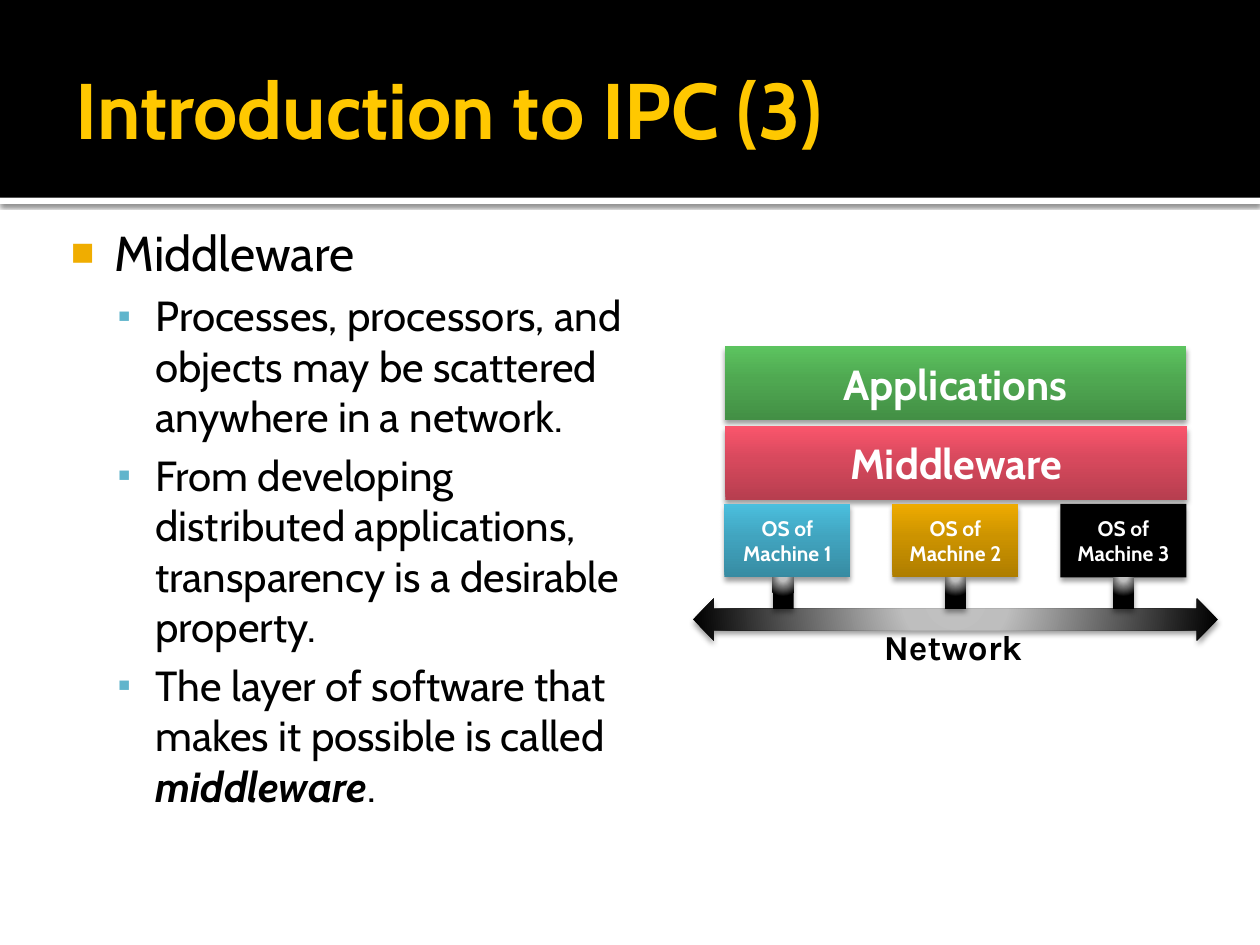
from dataclasses import dataclass

from pptx import Presentation, oxml
from pptx.dml.color import RGBColor
from pptx.enum import shapes, text
from pptx.oxml import ns
from pptx.util import Pt

BLACK = RGBColor(0x00, 0x00, 0x00)
WHITE = RGBColor(0xFF, 0xFF, 0xFF)
YELLOW = RGBColor(0xFF, 0xC8, 0x00)
AMBER = RGBColor(0xF0, 0xAD, 0x00)
SKY = RGBColor(0x60, 0xB5, 0xCC)
GREENS = (RGBColor(0x43, 0x8F, 0x45), RGBColor(0x4F, 0xA8, 0x51), RGBColor(0x5C, 0xC3, 0x5F))
REDS = (RGBColor(0xB7, 0x3E, 0x4F), RGBColor(0xD7, 0x49, 0x5D), RGBColor(0xFA, 0x55, 0x6C))
BLUES = (RGBColor(0x37, 0x8B, 0xA2), RGBColor(0x41, 0xA4, 0xBF), RGBColor(0x4B, 0xBF, 0xDE))
GOLDS = (RGBColor(0xAE, 0x7D, 0x00), RGBColor(0xCC, 0x93, 0x00), RGBColor(0xEE, 0xAB, 0x00))
SILVER = RGBColor(0xC0, 0xC0, 0xC0)
GREY = RGBColor(0xBE, 0xBE, 0xBE)
METAL = (SILVER, SILVER, GREY, BLACK)

LINEAR = '<a:lin ang="16200000" scaled="0"/>'
RADIAL = '<a:path path="circle"><a:fillToRect l="10000" t="-25000" r="10000" b="125000"/></a:path>'
RECTANGLE = shapes.MSO_SHAPE.RECTANGLE
ARROW = shapes.MSO_SHAPE.LEFT_RIGHT_ARROW


@dataclass
class Shadow:
    opacity: int
    blur: float
    distance: float


@dataclass
class Block:
    left: float
    top: float
    width: float
    height: float
    colors: tuple
    label: str = ""
    size: int = 24
    kind: shapes.MSO_SHAPE = RECTANGLE
    shadow: Shadow | None = None


@dataclass
class Bullet:
    symbol: str
    color: RGBColor
    scale: int
    margin: float
    indent: float
    size: int
    before: float


SOFT = Shadow(38, 3.1, 2)
TOPIC = Bullet("■", AMBER, 80, 34.5, -25.2, 28, 0)
DETAIL = Bullet("▪", SKY, 90, 57.6, -21.6, 24, 4.8)


def add_xml(parent, content: str) -> None:
    parent.append(oxml.parse_xml(content.replace(">", f" {ns.nsdecls('a')}>", 1)))


def set_font(paragraph, name: str, size: int, color: RGBColor, bold: bool) -> None:
    font = paragraph.font
    font.name, font.size, font.bold = name, Pt(size), bold
    font.color.rgb = color


def set_gradient(shape, colors: tuple) -> None:
    metal = colors == METAL
    places = (0, 12, 20, 100) if metal else (0, 55, 100)
    stops = "".join(
        f'<a:gs pos="{place * 1000}"><a:srgbClr val="{color}"/></a:gs>'
        for place, color in zip(places, colors)
    )
    direction = RADIAL if metal else LINEAR
    add_xml(
        shape._element.spPr,
        f'<a:gradFill rotWithShape="1"><a:gsLst>{stops}</a:gsLst>{direction}</a:gradFill>',
    )


def set_shadow(shape, shadow: Shadow) -> None:
    add_xml(
        shape._element.spPr.find(ns.qn("a:effectLst")),
        f'<a:outerShdw blurRad="{Pt(shadow.blur)}" dist="{Pt(shadow.distance)}" dir="5400000"'
        f' rotWithShape="0"><a:srgbClr val="{BLACK}">'
        f'<a:alpha val="{shadow.opacity * 1000}"/></a:srgbClr></a:outerShdw>',
    )


def add_block(container, block: Block):
    shape = container.add_shape(
        block.kind, Pt(block.left), Pt(block.top), Pt(block.width), Pt(block.height)
    )
    if len(block.colors) == 1:
        shape.fill.solid()
        shape.fill.fore_color.rgb = block.colors[0]
    else:
        set_gradient(shape, block.colors)
    shape.line.fill.background()
    shape.shadow.inherit = False
    if block.shadow:
        set_shadow(shape, block.shadow)
    if block.label:
        frame = shape.text_frame
        frame.text = block.label
        frame.vertical_anchor = text.MSO_ANCHOR.MIDDLE
        paragraph = frame.paragraphs[0]
        paragraph.alignment = text.PP_ALIGN.CENTER
        set_font(paragraph, "Cabin", block.size, WHITE, True)
    return shape


def place(shape, left: float, top: float, width: float, height: float) -> None:
    shape.left, shape.top, shape.width, shape.height = Pt(left), Pt(top), Pt(width), Pt(height)


def set_insets(frame, left: float, top: float, right: float, bottom: float) -> None:
    frame.margin_left, frame.margin_top = Pt(left), Pt(top)
    frame.margin_right, frame.margin_bottom = Pt(right), Pt(bottom)
    frame.auto_size = text.MSO_AUTO_SIZE.NONE
    frame.word_wrap = True


def format_bullet(paragraph, bullet: Bullet) -> None:
    paragraph.space_before = Pt(bullet.before)
    properties = paragraph._p.get_or_add_pPr()
    properties.set("marL", str(Pt(bullet.margin)))
    properties.set("indent", str(Pt(bullet.indent)))
    add_xml(properties, f'<a:buClr><a:srgbClr val="{bullet.color}"/></a:buClr>')
    add_xml(properties, f'<a:buSzPct val="{bullet.scale * 1000}"></a:buSzPct>')
    add_xml(properties, f'<a:buChar char="{bullet.symbol}"></a:buChar>')
    set_font(paragraph, "Cabin", bullet.size, BLACK, False)


def add_header(slide) -> None:
    bands = (
        Block(0, 113, 720, 3.6, (WHITE,), shadow=Shadow(60, 2.5, 0.8)),
        Block(0, 0, 720, 113, (BLACK,)),
    )
    for position, band in enumerate(bands, start=2):
        shape = add_block(slide.shapes, band)
        slide.shapes._spTree.insert(position, shape._element)
    title = slide.shapes.title
    place(title, 36, 12, 648, 99)
    frame = title.text_frame
    frame.text = "Introduction to IPC (3)"
    set_insets(frame, 7.2, 3.6, 3.6, 3.6)
    frame.vertical_anchor = text.MSO_ANCHOR.MIDDLE
    frame.paragraphs[0].alignment = text.PP_ALIGN.LEFT
    set_font(frame.paragraphs[0], "Cabin", 45, YELLOW, True)


def add_body(slide) -> None:
    body = slide.placeholders[1]
    place(body, 24, 120, 354, 364)
    frame = body.text_frame
    set_insets(frame, 7.2, 7.2, 7.2, 3.6)
    frame.text = "Middleware"
    format_bullet(frame.paragraphs[0], TOPIC)
    for detail in (
        "Processes, processors, and objects may be scattered anywhere in a network.",
        "From developing distributed applications, transparency is a desirable property.",
        "The layer of software that makes it possible is called ",
    ):
        paragraph = frame.add_paragraph()
        paragraph.level = 1
        paragraph.add_run().text = detail
        format_bullet(paragraph, DETAIL)
    term = paragraph.add_run()
    term.text = "middleware"
    term.font.bold = term.font.italic = True
    paragraph.add_run().text = "."


def add_diagram(slide) -> None:
    diagram = slide.shapes.add_group_shape().shapes
    blocks = [
        Block(414, 198, 264, 42, GREENS, "Applications"),
        Block(414.5, 243.5, 264, 42, REDS, "Middleware"),
    ]
    for index, colors in enumerate((BLUES, GOLDS, (BLACK,))):
        blocks.append(
            Block(414 + 96 * index, 288, 72, 42, colors, f"OS of Machine {index + 1}", 12)
        )
    blocks.append(Block(396, 342, 300, 24, METAL, kind=ARROW))
    blocks += [Block(left, 330, 12, 18, METAL) for left in (441.5, 540, 636)]
    for block in blocks:
        block.shadow = SOFT
        add_block(diagram, block)
    caption = diagram.add_textbox(Pt(498), Pt(354), Pt(101.5), Pt(31.5))
    caption.text_frame.text = "Network"
    caption.text_frame.word_wrap = False
    set_font(caption.text_frame.paragraphs[0], "Karla", 20, BLACK, True)


def main() -> None:
    presentation = Presentation()
    presentation.slide_width, presentation.slide_height = Pt(720), Pt(540)
    slide = presentation.slides.add_slide(presentation.slide_layouts[1])
    add_header(slide)
    add_body(slide)
    add_diagram(slide)
    presentation.save("out.pptx")


if __name__ == "__main__":
    main()
